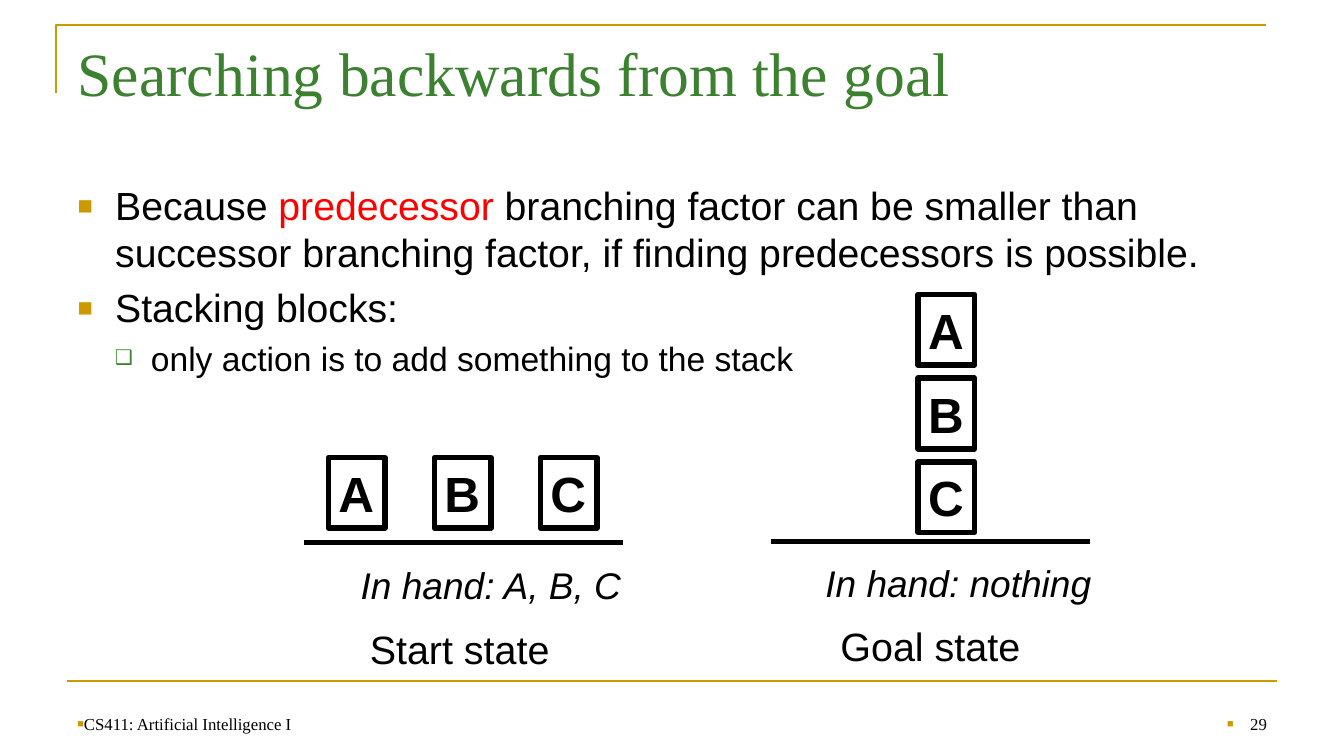
import pptx
import pptx.util
import pptx.dml.color
import pptx.enum.shapes
import pptx.enum.text
import pptx.oxml.ns
import lxml.etree

Cm = pptx.util.Cm
Pt = pptx.util.Pt
MSO_ANCHOR = pptx.enum.text.MSO_ANCHOR
PP_ALIGN = pptx.enum.text.PP_ALIGN

COLOURS = {"gold": "CC9900", "green": "3B812F", "red": "FF0000", "black": "000000"}
SANS = "Arial"
SERIF = "Times New Roman"


def rgb(name):
    return pptx.dml.color.RGBColor.from_string(COLOURS[name])


def style_font(paragraph, size, face=SANS, colour="black", bold=False, italic=False):
    font = paragraph.font
    font.size = Pt(size)
    font.name = face
    font.bold = bold
    font.italic = italic
    font.color.rgb = rgb(colour)


def place(shape, left, top, width, height):
    shape.left, shape.top = Cm(left), Cm(top)
    shape.width, shape.height = Cm(width), Cm(height)


def add_bullet(paragraph, char, colour, percent, margin=0, hanging=0):
    properties = paragraph._p.get_or_add_pPr()
    properties.set("marL", str(Cm(margin)))
    properties.set("indent", str(-Cm(hanging)))

    def add(parent, tag, **attributes):
        return lxml.etree.SubElement(parent, pptx.oxml.ns.qn(tag), attributes)

    add(add(properties, "a:buClr"), "a:srgbClr", val=COLOURS[colour])
    add(properties, "a:buSzPct", val=str(percent * 1000))
    add(properties, "a:buFont", typeface=SANS)
    add(properties, "a:buChar", char=char)


def add_line(slide, left, right, top, colour="black", weight=4):
    line = slide.shapes.add_connector(
        pptx.enum.shapes.MSO_CONNECTOR.STRAIGHT, Cm(left), Cm(top), Cm(right), Cm(top))
    line.line.color.rgb = rgb(colour)
    line.line.width = Pt(weight)
    lxml.etree.SubElement(line._element.spPr, pptx.oxml.ns.qn("a:effectLst"))


def add_corner(slide):
    builder = slide.shapes.build_freeform(Cm(1.42), Cm(2.34))
    builder.add_line_segments([(Cm(1.42), Cm(0.64)), (Cm(31.9), Cm(0.64))], close=False)
    corner = builder.convert_to_shape()
    corner.shadow.inherit = False
    corner.fill.background()
    corner.line.color.rgb = rgb("gold")
    corner.line.width = Pt(1.5)


def add_block(slide, letter, left, top):
    block = slide.shapes.add_shape(
        pptx.enum.shapes.MSO_SHAPE.RECTANGLE, Cm(left), Cm(top), Cm(1.42), Cm(1.78))
    block.shadow.inherit = False
    block.fill.background()
    block.line.color.rgb = rgb("black")
    block.line.width = Pt(4)
    frame = block.text_frame
    frame.word_wrap = False
    frame.text = letter
    frame.paragraphs[0].alignment = PP_ALIGN.LEFT
    style_font(frame.paragraphs[0], 35.3, bold=True)


def add_label(slide, text, size, left, top, width, height, italic=False):
    label = slide.shapes.add_textbox(Cm(left), Cm(top), Cm(width), Cm(height))
    label.text_frame.word_wrap = False
    label.text_frame.text = text
    style_font(label.text_frame.paragraphs[0], size, italic=italic)


def add_footer(slide, text, left, width, align, indent=0):
    footer = slide.shapes.add_textbox(Cm(left), Cm(17.35), Cm(width), Cm(1.27))
    frame = footer.text_frame
    frame.word_wrap = True
    frame.vertical_anchor = MSO_ANCHOR.BOTTOM
    frame.text = text
    paragraph = frame.paragraphs[0]
    paragraph.alignment = align
    add_bullet(paragraph, "■", "gold", 65, indent, indent)
    style_font(paragraph, 12, SERIF)


def fill_title(title):
    place(title, 1.7, 0.76, 30.48, 3.18)
    frame = title.text_frame
    frame.text = "Searching backwards from the goal"
    frame.vertical_anchor = MSO_ANCHOR.TOP
    frame.auto_size = pptx.enum.text.MSO_AUTO_SIZE.NONE
    frame.paragraphs[0].alignment = PP_ALIGN.LEFT
    style_font(frame.paragraphs[0], 44, SERIF, "green")


def fill_body(body):
    place(body, 1.7, 4.45, 30.48, 12.57)
    frame = body.text_frame
    frame.auto_size = pptx.enum.text.MSO_AUTO_SIZE.NONE
    points = [
        (0, [("Because ", None), ("predecessor", "red"),
             (" branching factor can be smaller than successor branching factor, "
              "if finding predecessors is possible.", None)]),
        (0, [("Stacking blocks:", None)]),
        (1, [("only action is to add something to the stack", None)]),
    ]
    levels = [(28, "■", "gold", 65, 0.95, 0.95), (24, "❑", "green", 60, 1.85, 0.91)]
    for index, (level, pieces) in enumerate(points):
        point = frame.paragraphs[0] if index == 0 else frame.add_paragraph()
        size, *bullet = levels[level]
        point.level = level
        point.space_before = Pt(size * 0.2)
        add_bullet(point, *bullet)
        style_font(point, size)
        for text, colour in pieces:
            run = point.add_run()
            run.text = text
            if colour:
                run.font.color.rgb = rgb(colour)


def main():
    deck = pptx.Presentation()
    deck.slide_width, deck.slide_height = Cm(33.87), Cm(19.05)
    slide = deck.slides.add_slide(deck.slide_layouts[1])

    add_corner(slide)
    add_line(slide, 1.7, 32.18, 17.15, "gold", 1.5)
    fill_title(slide.shapes.title)
    fill_body(slide.placeholders[1])
    add_footer(slide, "CS411: Artificial Intelligence I", 1.7, 20.6, PP_ALIGN.LEFT)
    add_footer(slide, "29", 24.28, 7.9, PP_ALIGN.RIGHT, 0.58)

    for index, letter in enumerate("ABC"):
        add_block(slide, letter, 8.28 + 2.67 * index, 11.53)
        add_block(slide, letter, 23.14, 7.42 + 2.11 * index)

    add_line(slide, 7.65, 15.7, 13.67)
    add_label(slide, "In hand: A, B, C", 26.5, 8.84, 14.05, 7.14, 1.4, italic=True)
    add_label(slide, "Start state", 28.2, 9.07, 15.62, 5.11, 1.47)

    add_line(slide, 19.43, 27.46, 13.64)
    add_label(slide, "In hand: nothing", 26.5, 20.55, 14, 7.29, 1.4, italic=True)
    add_label(slide, "Goal state", 28.2, 20.93, 15.54, 5.11, 1.47)

    deck.save("out.pptx")


if __name__ == "__main__":
    main()
